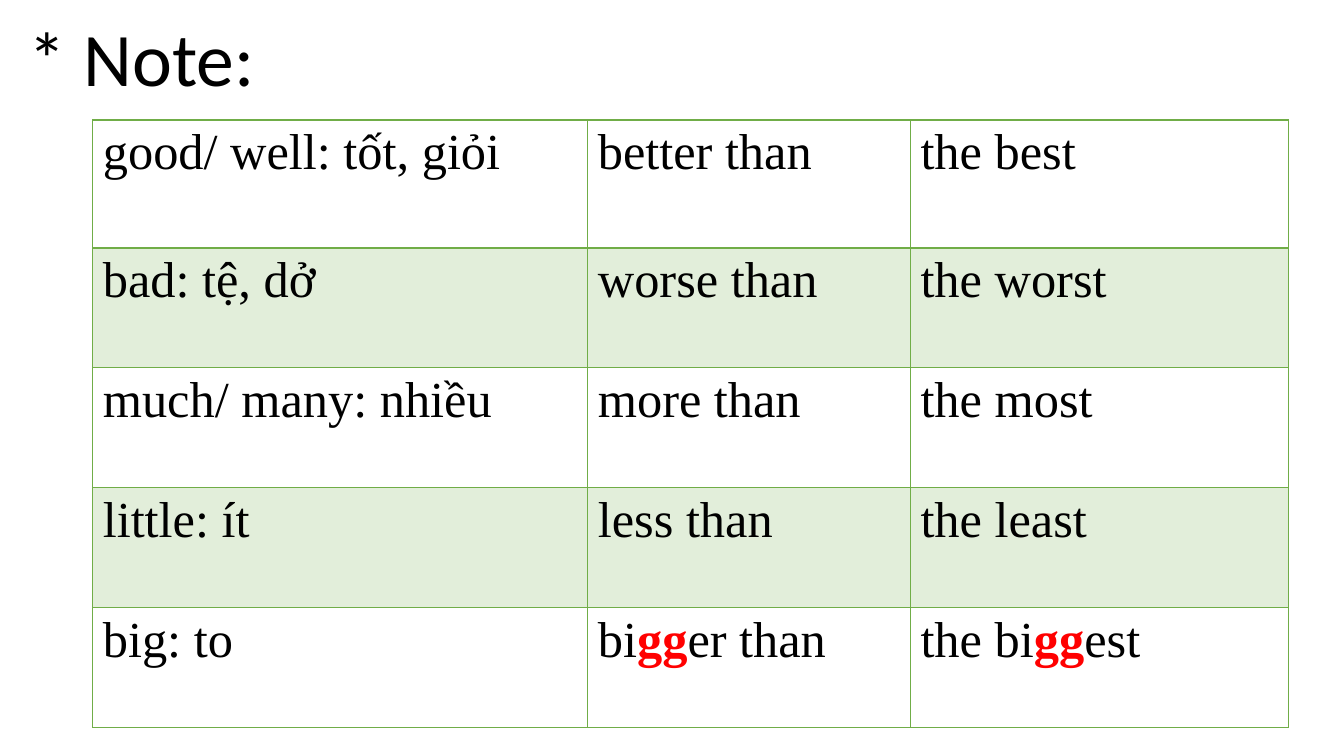
from dataclasses import dataclass

from lxml.etree import SubElement
from pptx import Presentation
from pptx.dml.color import RGBColor as RGB
from pptx.enum.text import MSO_AUTO_SIZE as AutoSize, PP_ALIGN as Align
from pptx.oxml.ns import qn
from pptx.util import Inches, Pt

# Content: a cell is a string, or a tuple whose odd parts are emphasised
TITLE = "* Note: "
ROWS = [
    ("good/ well: tốt, giỏi", "better than", "the best"),
    ("bad: tệ, dở", "worse than", "the worst"),
    ("much/ many: nhiều", "more than", "the most"),
    ("little: ít", "less than", "the least"),
    ("big: to", ("bi", "gg", "er than"), ("the bi", "gg", "est")),
]

# Layout in inches
TITLE_BOX = (0.17, 0.06, 2.64, 1.01)
TABLE_LEFT, TABLE_TOP = 0.92, 1.19
COLS = (4.91, 3.2, 3.75)
HEIGHTS = [1.27] + [1.19] * (len(ROWS) - 1)


@dataclass(frozen=True)
class Theme:
    text: str = "000000"
    accent: str = "FF0000"
    green: str = "70AD47"
    band_alpha: int = 20
    title_font: str = "Calibri"
    title_size: int = 54
    cell_font: str = "Times New Roman"
    cell_size: int = 36


THEME = Theme()


def add_run(p, text, font, size, color, bold=False):
    r = p.add_run()
    r.text = text
    r.font.name, r.font.size, r.font.bold = font, Pt(size), bold
    r.font.color.rgb = RGB.from_string(color)


def set_borders(cell, widths):
    tcPr = cell._tc.get_or_add_tcPr()
    for side, width in widths.items():
        ln = SubElement(tcPr, qn(f"a:ln{side}"), w=str(Pt(width)))
        fill = SubElement(ln, qn("a:solidFill"))
        SubElement(fill, qn("a:srgbClr"), val=THEME.green)


def fill_band(cell):
    cell.fill.solid()
    cell.fill.fore_color.rgb = RGB.from_string(THEME.green)
    color = cell._tc.tcPr.find(f"{qn('a:solidFill')}/{qn('a:srgbClr')}")
    SubElement(color, qn("a:alpha"), val=str(THEME.band_alpha * 1000))


prs = Presentation()
prs.slide_width, prs.slide_height = Inches(13.33), Inches(7.5)
s = prs.slides.add_slide(prs.slide_layouts[6])

# Comparison table
table = s.shapes.add_table(
    len(ROWS), len(COLS), Inches(TABLE_LEFT), Inches(TABLE_TOP),
    Inches(sum(COLS)), Inches(sum(HEIGHTS))).table
table.first_row = table.horz_banding = False
for column, width in zip(table.columns, COLS):
    column.width = Inches(width)

for i, (row, height) in enumerate(zip(ROWS, HEIGHTS)):
    table.rows[i].height = Inches(height)
    # The rule under the first row is heavier
    widths = {"L": 1, "R": 1, "T": 2 if i == 1 else 1, "B": 2 if i == 0 else 1}
    for j, content in enumerate(row):
        cell = table.cell(i, j)
        set_borders(cell, widths)
        if i % 2:
            fill_band(cell)
        else:
            cell.fill.background()
        parts = (content,) if isinstance(content, str) else content
        for k, part in enumerate(parts):
            strong = k % 2 == 1
            add_run(cell.text_frame.paragraphs[0], part, THEME.cell_font,
                    THEME.cell_size, THEME.accent if strong else THEME.text, strong)

# Title
tf = s.shapes.add_textbox(*map(Inches, TITLE_BOX)).text_frame
tf.word_wrap = False
tf.auto_size = AutoSize.SHAPE_TO_FIT_TEXT
p = tf.paragraphs[0]
p.alignment = Align.CENTER
add_run(p, TITLE, THEME.title_font, THEME.title_size, THEME.text)

prs.save("out.pptx")
